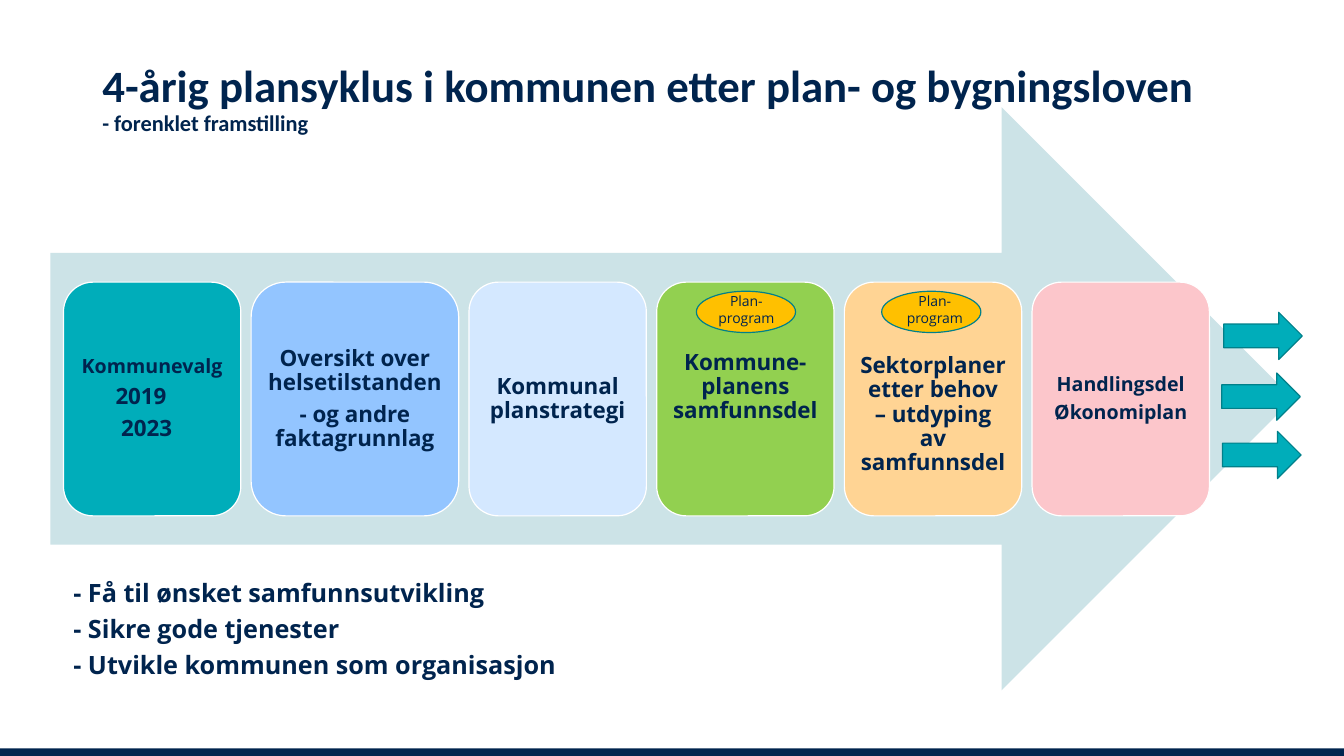
import pptx
import pptx.util
import pptx.dml.color
import pptx.enum.shapes
import pptx.enum.text

Cm, Pt = pptx.util.Cm, pptx.util.Pt
Shape = pptx.enum.shapes.MSO_SHAPE
Align = pptx.enum.text.PP_ALIGN
Anchor = pptx.enum.text.MSO_ANCHOR

# Content: (text, size name, right indent in cm)
heading = [("4-årig plansyklus i kommunen etter plan- og bygningsloven", "title", 0),
           ("- forenklet framstilling", "stage", 0)]
# Stages: colour, width, extra top inset, extra bottom inset, lines
stages = [
    ("teal", 4.47, 0, 0, [("Kommunevalg", "small", 0), ("2019", "stage", 0.56),
                          ("2023", "stage", 0.28)]),
    ("blue", 5.23, 0, 0, [("Oversikt over helsetilstanden", "stage", 0),
                          ("- og andre faktagrunnlag", "stage", 0)]),
    ("pale", 4.47, 0, 0, [("Kommunal planstrategi", "stage", 0)]),
    ("green", 4.47, 0, 0.6, [("Kommune-planens samfunnsdel", "stage", 0)]),
    ("peach", 4.47, 0.8, 0, [("Sektorplaner etter behov – utdyping av samfunnsdel", "stage", 0)]),
    ("pink", 4.47, 0, 0, [("Handlingsdel", "small", 0), ("Økonomiplan", "small", 0)]),
]
programme = [("Plan-program", "badge", 0)]
programme_places = [(17.55, 17.63), (22.22, 22.38)]  # left of oval, left of label
goals = [(text, "goal", 0) for text in (
    "- Få til ønsket samfunnsutvikling",
    "- Sikre gode tjenester",
    "- Utvikle kommunen som organisasjon")]
onward_arrows = [(30.84, 7.87), (30.79, 9.4), (30.81, 10.87)]

theme = {
    "colours": {"navy": "00244E", "arrow": "CCE3E7", "teal": "00ADBA", "blue": "93C5FF",
                "pale": "D4E8FF", "green": "92D050", "peach": "FFD494", "pink": "FCC6CB",
                "amber": "FFC000", "outline": "00808A", "white": "FFFFFF"},
    "sizes": {"title": 32, "goal": 18, "stage": 16, "small": 14, "badge": 10},
    "heading_font": "Calibri", "body_font": "Open Sans", "line": 0.85,
}


def colour(name):
    return pptx.dml.color.RGBColor.from_string(theme["colours"][name])


def set_all(target, values):
    for name, value in values.items():
        setattr(target, name, value)


def draw(kind, left, top, width, height, fill, line=None):
    part = slide.shapes.add_shape(kind, Cm(left), Cm(top), Cm(width), Cm(height))
    part.shadow.inherit = False
    part.fill.solid()
    part.fill.fore_color.rgb = colour(fill)
    if line:
        part.line.color.rgb = colour(line)
        part.line.width = Pt(theme["line"])
    else:
        part.line.fill.background()
    return part


def write(frame, lines, align, bold=True, font="body_font", spacing=0.9, after=0.0, **layout):
    set_all(frame, {"word_wrap": True, **layout})
    for index, (text, size_name, indent) in enumerate(lines):
        paragraph = frame.paragraphs[0] if index == 0 else frame.add_paragraph()
        size = theme["sizes"][size_name]
        set_all(paragraph, {"alignment": align, "line_spacing": spacing,
                            "space_after": Pt(size * after)})
        if indent:
            paragraph._p.get_or_add_pPr().set("marR", str(Cm(indent)))
        run = paragraph.add_run()
        run.text = text
        set_all(run.font, {"name": theme[font], "size": Pt(size), "bold": bold})
        run.font.color.rgb = colour("navy")


def text_frame(left, top, width, height):
    return slide.shapes.add_textbox(Cm(left), Cm(top), Cm(width), Cm(height)).text_frame


deck = pptx.Presentation()
set_all(deck, {"slide_width": Cm(33.87), "slide_height": Cm(19.05)})
slide = deck.slides.add_slide(deck.slide_layouts[6])

# Footer band, heading and large arrow
draw(Shape.RECTANGLE, 0, 18.86, 33.87, 0.19, "navy")
write(text_frame(2.33, 0.69, 29.21, 3.68), heading, Align.LEFT,
      font="heading_font", vertical_anchor=Anchor.MIDDLE)
draw(Shape.RIGHT_ARROW, 1.27, 2.7, 31.32, 14.7, "arrow")

# Stages, set side by side with an equal gap
left, gap, inset = 1.6, 0.26, 0.17
for fill, width, extra_top, extra_bottom, lines in stages:
    stage = draw(Shape.ROUNDED_RECTANGLE, left, 7.11, width, 5.89, fill, "white")
    write(stage.text_frame, lines, Align.CENTER, after=0.35,
          vertical_anchor=Anchor.MIDDLE, margin_left=Cm(inset), margin_right=Cm(inset),
          margin_top=Cm(inset + extra_top), margin_bottom=Cm(inset + extra_bottom))
    left += width + gap

# Planning programme badges
for oval_left, label_left in programme_places:
    draw(Shape.OVAL, oval_left, 7.34, 2.5, 1.04, "amber", "outline")
    write(text_frame(label_left, 7.24, 2.36, 1.12), programme, Align.CENTER,
          bold=False, spacing=1.0)

# Arrows leading onward
for arrow_left, arrow_top in onward_arrows:
    draw(Shape.RIGHT_ARROW, arrow_left, arrow_top, 1.98, 1.19, "teal", "outline")

# Goals
write(text_frame(1.6, 14.5, 23.9, 2.87), goals, Align.LEFT, after=0.35)

deck.save("out.pptx")
